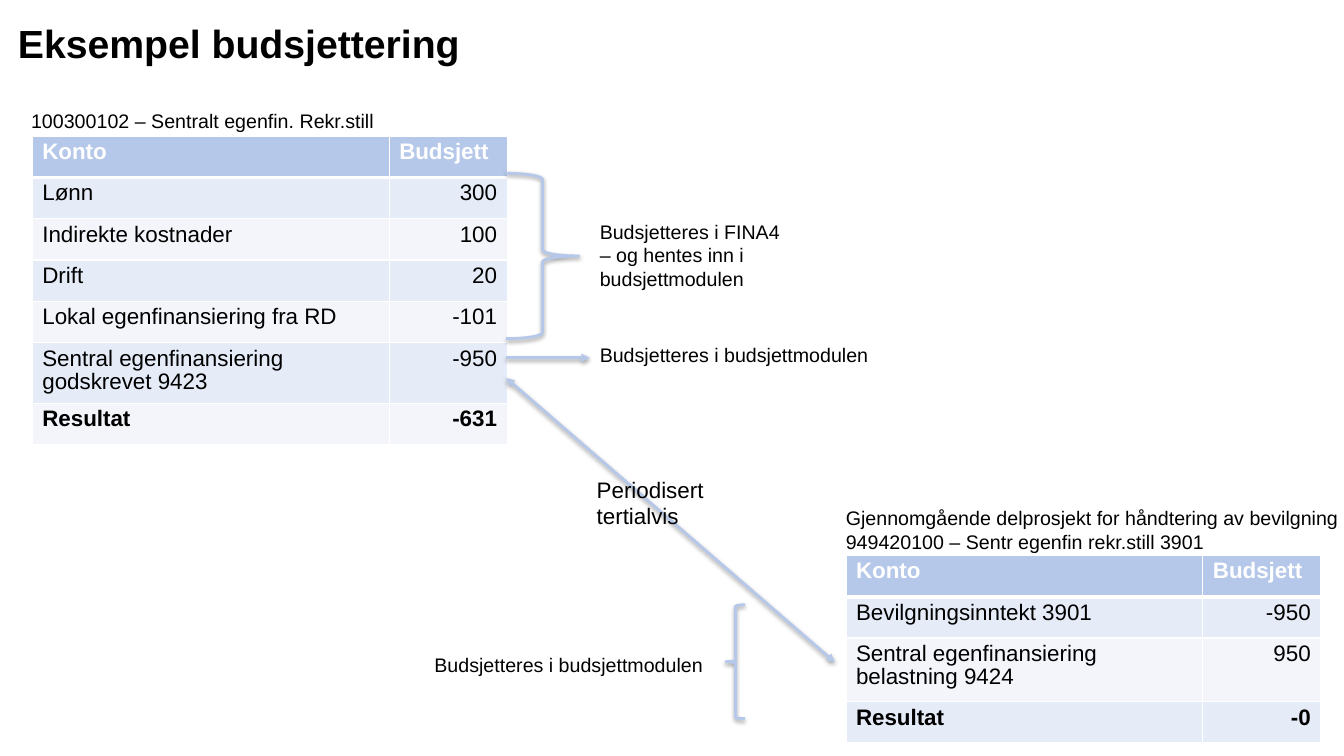
from dataclasses import dataclass

from lxml import etree
from pptx import Presentation
from pptx.dml.color import RGBColor
from pptx.enum.shapes import MSO_CONNECTOR, MSO_SHAPE
from pptx.enum.text import PP_ALIGN
from pptx.oxml import parse_xml
from pptx.oxml.ns import nsdecls, qn
from pptx.util import Emu, Pt

STRAIGHT = MSO_CONNECTOR.STRAIGHT
LEFT_BRACE = MSO_SHAPE.LEFT_BRACE
RIGHT_BRACE = MSO_SHAPE.RIGHT_BRACE
LEFT = PP_ALIGN.LEFT
RIGHT = PP_ALIGN.RIGHT

EMU_PER_PX = 9144
FONT = "Arial"
BLACK = "000000"
WHITE = "FFFFFF"
ACCENT = "B6C8E9"
BANDS = ("E5EBF7", "F3F5FB")
COLUMN_WIDTHS = (354, 117)
ROW_HEIGHT = 41
CELL_LINE_SPACING = 0.93


@dataclass
class Label:
    left: int
    top: int
    width: int
    height: int
    lines: tuple[str, ...]
    size: int = 14
    bold: bool = False
    wrap: bool = True


@dataclass
class Budget:
    left: int
    top: int
    tall_height: int
    entries: tuple[tuple[str, str], ...]


@dataclass
class Brace:
    preset: MSO_SHAPE
    left: int
    top: int
    width: int
    height: int


@dataclass
class Arrow:
    start: tuple[int, int]
    end: tuple[int, int]
    ends: tuple[str, ...]


BUDGETS = (
    Budget(32, 135, 60, (
        ("Lønn", "300"),
        ("Indirekte kostnader", "100"),
        ("Drift", "20"),
        ("Lokal egenfinansiering fra RD", "-101"),
        ("Sentral egenfinansiering godskrevet 9423", "-950"),
        ("Resultat", "-631"),
    )),
    Budget(839, 551, 63, (
        ("Bevilgningsinntekt 3901", "-950"),
        ("Sentral egenfinansiering belastning 9424", "950"),
        ("Resultat", "-0"),
    )),
)
BRACES = (
    Brace(RIGHT_BRACE, 502, 172, 72, 164),
    Brace(LEFT_BRACE, 720, 600, 19, 113),
)
ARROWS = (
    Arrow((502, 355), (585, 355), ("tailEnd",)),
    Arrow((502, 375), (828, 657), ("headEnd", "tailEnd")),
)
LABELS = (
    Label(8, 14, 1200, 57, ("Eksempel budsjettering",), size=28, bold=True),
    Label(585, 213, 208, 81, ("Budsjetteres i FINA4 – og hentes inn i budsjettmodulen",)),
    Label(585, 335, 288, 34, ("Budsjetteres i budsjettmodulen",), wrap=False),
    Label(21, 103, 382, 64, ("100300102 – Sentralt egenfin. Rekr.still",)),
    Label(829, 497, 512, 88, (
        "Gjennomgående delprosjekt for håndtering av bevilgning",
        "949420100 – Sentr egenfin rekr.still 3901",
    )),
    Label(421, 643, 288, 34, ("Budsjetteres i budsjettmodulen",), wrap=False),
    Label(582, 467, 188, 64, ("Periodisert tertialvis",), size=16),
)


def px(length: int) -> Emu:
    return Emu(length * EMU_PER_PX)


def rgb(value: str) -> RGBColor:
    return RGBColor.from_string(value)


def add_text(paragraph, text: str, size: int, bold: bool, color: str) -> None:
    run = paragraph.add_run()
    run.text = text
    run.font.name = FONT
    run.font.size = Pt(size)
    run.font.bold = bold
    run.font.color.rgb = rgb(color)


def draw_label(slide, label: Label) -> None:
    box = slide.shapes.add_textbox(
        px(label.left), px(label.top), px(label.width), px(label.height))
    frame = box.text_frame
    frame.word_wrap = label.wrap
    for index, line in enumerate(label.lines):
        paragraph = frame.add_paragraph() if index else frame.paragraphs[0]
        add_text(paragraph, line, label.size, label.bold, BLACK)


def set_borders(cell, header: bool) -> None:
    properties = cell._tc.get_or_add_tcPr()
    for index, side in enumerate(("lnL", "lnR", "lnT", "lnB")):
        width = Pt(3 if header and side == "lnB" else 1)
        properties.insert(index, parse_xml(
            f'<a:{side} {nsdecls("a")} w="{width}"><a:solidFill>'
            f'<a:srgbClr val="{WHITE}"/></a:solidFill></a:{side}>'))


def draw_budget(slide, budget: Budget) -> None:
    entries = (("Konto", "Budsjett"),) + budget.entries
    last = len(entries) - 1
    table = slide.shapes.add_table(
        len(entries), len(COLUMN_WIDTHS), px(budget.left), px(budget.top),
        px(sum(COLUMN_WIDTHS)), px(ROW_HEIGHT * len(entries))).table
    for column, width in zip(table.columns, COLUMN_WIDTHS):
        column.width = px(width)
    for row, entry in enumerate(entries):
        header = row == 0
        table.rows[row].height = px(budget.tall_height if row == last - 1 else ROW_HEIGHT)
        for column, text in enumerate(entry):
            cell = table.cell(row, column)
            cell.fill.solid()
            cell.fill.fore_color.rgb = rgb(ACCENT if header else BANDS[(row - 1) % 2])
            set_borders(cell, header)
            paragraph = cell.text_frame.paragraphs[0]
            paragraph.alignment = RIGHT if column and not header else LEFT
            paragraph.line_spacing = CELL_LINE_SPACING
            add_text(paragraph, text, 16, row in (0, last), WHITE if header else BLACK)


def style_stroke(stroke) -> None:
    stroke.line.color.rgb = rgb(ACCENT)
    stroke.line.width = Pt(2)
    stroke._element.spPr.append(parse_xml(
        f'<a:effectLst {nsdecls("a")}><a:outerShdw blurRad="40000" dist="20000" '
        f'dir="5400000" rotWithShape="0"><a:srgbClr val="{BLACK}">'
        '<a:alpha val="38000"/></a:srgbClr></a:outerShdw></a:effectLst>'))


def draw_brace(slide, brace: Brace) -> None:
    bracket = slide.shapes.add_shape(
        brace.preset, px(brace.left), px(brace.top), px(brace.width), px(brace.height))
    bracket.fill.background()
    style_stroke(bracket)


def draw_arrow(slide, arrow: Arrow) -> None:
    connector = slide.shapes.add_connector(
        STRAIGHT, *(px(value) for value in arrow.start + arrow.end))
    style_stroke(connector)
    outline = connector.line._get_or_add_ln()
    for end in arrow.ends:
        etree.SubElement(outline, qn(f"a:{end}"), type="triangle")


def main() -> None:
    presentation = Presentation()
    presentation.slide_width = px(1333)
    presentation.slide_height = px(750)
    slide = presentation.slides.add_slide(presentation.slide_layouts[6])
    for budget in BUDGETS:
        draw_budget(slide, budget)
    for brace in BRACES:
        draw_brace(slide, brace)
    for arrow in ARROWS:
        draw_arrow(slide, arrow)
    for label in LABELS:
        draw_label(slide, label)
    presentation.save("out.pptx")


if __name__ == "__main__":
    main()
